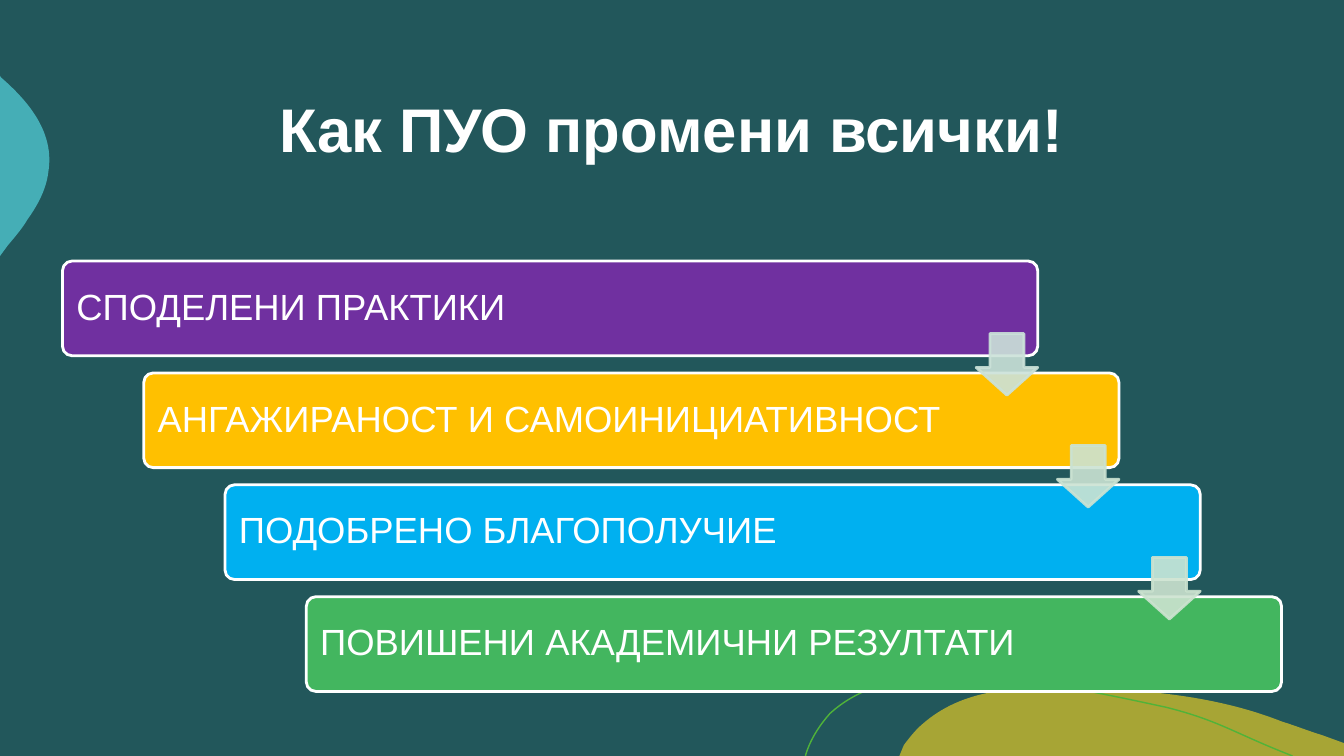
from collections import namedtuple

from lxml import etree
from pptx import Presentation
from pptx import util as u
from pptx.dml.color import RGBColor
from pptx.enum import shapes, text
from pptx.oxml import ns

WHITE = RGBColor(0xFF, 0xFF, 0xFF)
BACKGROUND = RGBColor(0x22, 0x57, 0x5B)
OLIVE = RGBColor(0xA7, 0xA5, 0x35)
TEAL = RGBColor(0x45, 0xAE, 0xB6)
LEAF = RGBColor(0x50, 0xB3, 0x39)
PURPLE = RGBColor(0x70, 0x30, 0xA0)
AMBER = RGBColor(0xFF, 0xC0, 0x00)
BLUE = RGBColor(0x00, 0xB0, 0xF0)
GREEN = RGBColor(0x43, 0xB6, 0x5F)
ARROW_COLORS = [
    RGBColor(0xCB, 0xE2, 0xD9),
    RGBColor(0xCB, 0xE3, 0xD3),
    RGBColor(0xCC, 0xE3, 0xD0),
]

FONT = "Arial"
CELL = u.Inches(1)
COLUMNS, ROWS = 13.33, 7.5

Box = namedtuple("Box", "left top width height")

STEPS = [
    ("СПОДЕЛЕНИ ПРАКТИКИ", PURPLE),
    ("АНГАЖИРАНОСТ И САМОИНИЦИАТИВНОСТ", AMBER),
    ("ПОДОБРЕНО БЛАГОПОЛУЧИЕ", BLUE),
    ("ПОВИШЕНИ АКАДЕМИЧНИ РЕЗУЛТАТИ", GREEN),
]

OLIVE_HILL = [
    [(37, 0)],
    [(54, 0), (71, 10), (86, 49)],
    [(89, 55), (92, 63), (95, 69)],
    [(100, 81)], [(100, 100)], [(0, 100)], [(1, 84)],
    [(2, 75), (3, 67), (4, 60)],
    [(11, 15), (20, 1), (30, 0)],
    [(32, 0), (34, 0), (37, 0)],
]
TEAL_DROP = [
    [(0, 0)], [(2, 1)],
    [(61, 15), (110, 32), (98, 53)],
    [(94, 63), (76, 72), (55, 80)],
    [(49, 83), (35, 88), (16, 94)],
    [(0, 100)],
]
LEAF_LINE = [
    [(0, 100)], [(0, 99)],
    [(1, 78), (3, 60), (5, 46)],
    [(11, 12), (19, 1), (26, 0)],
    [(32, 0)],
    [(46, 0), (62, 22), (74, 38)],
    [(85, 55), (88, 71), (100, 100)],
]


def to_emu(box):
    return [u.Emu(round(length * CELL)) for length in box]


def add_outline(slide, box, outline, closed):
    left, top, width, height = to_emu(box)
    builder = slide.shapes.build_freeform(left, top, scale=1.0)
    builder.add_line_segments([(left + width, top + height)], close=closed)
    shape = builder.convert_to_shape()
    shape.shadow.inherit = False

    route = next(shape.element.iter(ns.qn("a:path")))
    route.set("w", "100")
    route.set("h", "100")
    for command in list(route):
        route.remove(command)
    for index, points in enumerate(outline):
        tag = "a:cubicBezTo" if len(points) == 3 else "a:lnTo"
        command = etree.SubElement(route, ns.qn(tag if index else "a:moveTo"))
        for x, y in points:
            etree.SubElement(command, ns.qn("a:pt"), x=str(x), y=str(y))
    if closed:
        etree.SubElement(route, ns.qn("a:close"))
    return shape


def add_blob(slide, box, outline, color):
    shape = add_outline(slide, box, outline, True)
    shape.fill.solid()
    shape.fill.fore_color.rgb = color
    shape.line.fill.background()


def add_curve(slide, box, outline, color):
    shape = add_outline(slide, box, outline, False)
    shape.fill.background()
    shape.line.color.rgb = color
    shape.line.width = u.Pt(1)


def write(shape, words, size, bold, alignment):
    frame = shape.text_frame
    frame.word_wrap = True
    frame.vertical_anchor = text.MSO_ANCHOR.MIDDLE
    frame.text = words
    paragraph = frame.paragraphs[0]
    paragraph.alignment = alignment
    paragraph.line_spacing = 0.9
    font = paragraph.runs[0].font
    font.name, font.size, font.bold = FONT, u.Pt(size), bold
    font.color.rgb = WHITE


def add_title(slide, box, words):
    shape = slide.shapes.add_textbox(*to_emu(box))
    write(shape, words, 44, True, text.PP_ALIGN.CENTER)


def add_preset(slide, box, kind, adjustments, fill, line):
    shape = slide.shapes.add_shape(kind, *to_emu(box))
    shape.shadow.inherit = False
    for index, value in enumerate(adjustments):
        shape.adjustments[index] = value
    shape.fill.solid()
    shape.fill.fore_color.rgb = fill
    shape.line.color.rgb = line
    shape.line.width = u.Pt(2)
    return shape


def set_opacity(shape, percent):
    for color in shape.element.spPr.iter(ns.qn("a:srgbClr")):
        etree.SubElement(color, ns.qn("a:alpha"), val=str(percent * 1000))


def add_staircase(slide, box, steps):
    bar_width, bar_height = 0.8 * box.width, 0.22 * box.height
    shift = (box.width - bar_width) / (len(steps) - 1)
    pitch = (box.height - bar_height) / (len(steps) - 1)
    arrow_size = 0.65 * bar_height

    for index, (words, color) in enumerate(steps):
        bar_box = Box(box.left + index * shift, box.top + index * pitch,
                      bar_width, bar_height)
        bar = add_preset(slide, bar_box, shapes.MSO_SHAPE.ROUNDED_RECTANGLE,
                         [0.1], color, WHITE)
        bar.text_frame.margin_left = u.Inches(0.11)
        write(bar, words, 26, False, text.PP_ALIGN.LEFT)

    for index, color in enumerate(ARROW_COLORS):
        right = box.left + index * shift + bar_width
        middle = box.top + index * pitch + (bar_height + pitch) / 2
        arrow_box = Box(right - arrow_size, middle - arrow_size / 2,
                        arrow_size, arrow_size)
        arrow = add_preset(slide, arrow_box, shapes.MSO_SHAPE.DOWN_ARROW,
                           [0.55, 0.45], color, color)
        set_opacity(arrow, 90)


def main():
    presentation = Presentation()
    presentation.slide_width, presentation.slide_height = to_emu((COLUMNS, ROWS))
    slide = presentation.slides.add_slide(presentation.slide_layouts[6])
    slide.background.fill.solid()
    slide.background.fill.fore_color.rgb = BACKGROUND

    add_blob(slide, Box(8.92, 6.83, 4.41, 0.67), OLIVE_HILL, OLIVE)
    add_blob(slide, Box(0, 0.75, 0.49, 1.79), TEAL_DROP, TEAL)
    add_curve(slide, Box(7.99, 6.72, 4.83, 0.78), LEAF_LINE, LEAF)
    add_title(slide, Box(1.55, 0.77, 10.22, 1.09), "Как ПУО промени всички!")
    add_staircase(slide, Box(0.62, 2.59, 12.09, 4.27), STEPS)
    presentation.save("out.pptx")


if __name__ == "__main__":
    main()
